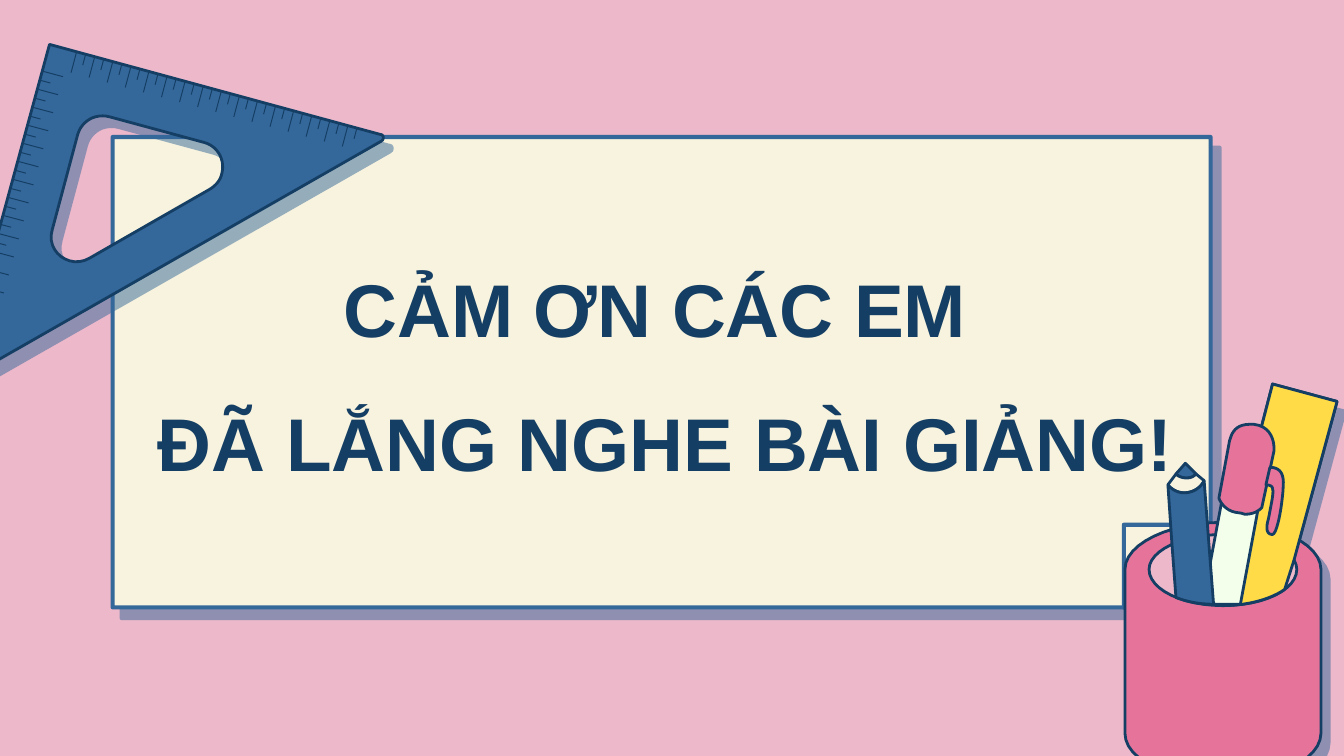
from lxml import etree
from pptx import Presentation
from pptx.dml.color import RGBColor
from pptx.enum import shapes, text
from pptx.oxml import ns
from pptx.util import Cm, Pt

PINK = RGBColor(0xEC, 0xB8, 0xCA)
ROSE = RGBColor(0xE5, 0x73, 0x9A)
CREAM = RGBColor(0xF8, 0xF3, 0xDE)
BLUE = RGBColor(0x34, 0x67, 0x9A)
NAVY = RGBColor(0x14, 0x3E, 0x63)
LEMON = RGBColor(0xF2, 0xF5, 0x74)
YELLOW = RGBColor(0xFF, 0xDB, 0x48)
MINT = RGBColor(0xF3, 0xFF, 0xEB)

RULER = "M 110 0 L 81 112 L 67 164 C 69 165 71 165 73 165 C 92 165 109 160 119 153 L 126 131 L 158 13"
CUP = ("M 73 103 C 33 103 0 119 0 138 L 0 260 C 0 280 33 295 73 295 "
       "C 113 295 146 280 146 260 L 146 138 C 146 119 113 103 73 103")
MOUTH = ("M 73 112 C 43 112 18 124 18 138 C 18 153 43 165 73 165 "
         "C 104 165 128 153 128 138 C 128 124 104 112 73 112")
PEN = "M 77 61 L 58 163 C 62 164 68 164 73 164 L 86 164 L 104 67"
PEN_CAP = ("M 93 30 C 80 30 79 40 78 42 L 70 85 C 70 85 73 95 85 96 C 87 96 88 97 90 97 "
           "C 98 97 102 92 102 92 L 111 50 C 111 50 113 32 96 30")
PEN_CLIP = ("M 108 62 L 105 75 C 105 75 110 75 110 78 C 111 81 109 89 107 100 "
            "C 104 110 107 112 110 112 C 114 111 118 85 118 73 C 118 62 110 62 108 62")
PENCIL_TIP = "M 45 59 L 38 67 C 40 69 43 70 45 70 C 49 70 51 69 53 67"
PENCIL_WOOD = ("M 53 67 C 51 69 49 70 46 70 C 43 70 40 69 38 67 L 32 75 "
               "C 35 79 40 81 44 81 C 50 81 56 78 59 72")
PENCIL_BODY = ("M 59 72 C 56 78 50 81 44 81 C 40 81 35 79 32 75 L 35 119 L 38 159 "
               "C 46 162 55 164 66 164 L 62 112")
SET_SQUARE = ("M 196 97 C 195 101 192 105 187 108 L 98 159 C 83 168 65 154 70 138 L 89 67 "
              "C 92 57 102 51 113 54 L 183 73 C 194 76 199 87 196 97 "
              "M 316 71 C 317 69 316 67 314 67 L 68 0 L 1 246 C 0 248 3 250 5 249 L 315 72")


def style(sp, fill, line, width, shadow=None):
    """Set fill and outline, and a hard shadow at the given distance in points."""
    sp.fill.solid()
    sp.fill.fore_color.rgb = fill
    sp.line.color.rgb = line
    sp.line.width = Pt(width)
    sp.shadow.inherit = False
    if shadow:
        effects = sp._element.spPr.find(ns.qn("a:effectLst"))
        outer = etree.SubElement(effects, ns.qn("a:outerShdw"), blurRad="0",
                                 dist=str(Pt(shadow)), dir="3000000", algn="bl", rotWithShape="0")
        color = etree.SubElement(outer, ns.qn("a:srgbClr"), val=str(BLUE))
        etree.SubElement(color, ns.qn("a:alpha"), val="50000")


def contours(outline, steps=12):
    """Turn M, L and C commands into lists of points, with curves sampled."""
    tokens = iter(outline.split())
    result = []
    for command in tokens:
        count = 3 if command == "C" else 1
        pts = [(float(next(tokens)), float(next(tokens))) for _ in range(count)]
        if command == "M":
            result.append(pts)
        elif command == "L":
            result[-1] += pts
        else:
            curve = [result[-1][-1]] + pts
            for i in range(1, steps + 1):
                t = i / steps
                weights = ((1 - t) ** 3, 3 * t * (1 - t) ** 2, 3 * t * t * (1 - t), t ** 3)
                result[-1].append(tuple(sum(w * p[k] for w, p in zip(weights, curve))
                                        for k in (0, 1)))
    return result


def place(box, units, point):
    """Map a point on a grid that is the given units wide into the box."""
    left, top, width, _ = box
    return round(left + point[0] * width / units), round(top + point[1] * width / units)


def draw(group, box, units, outline, fill, shadow=None):
    """Draw a closed outline in the box."""
    builder = None
    for contour in contours(outline):
        start, *rest = [place(box, units, p) for p in contour]
        if builder is None:
            builder = group.shapes.build_freeform(*start)
        else:
            builder.move_to(*start)
        builder.add_line_segments(rest, close=True)
    style(builder.convert_to_shape(), fill, NAVY, 1.5, shadow)


def add_card(s, box):
    """Add the message card with its folded corner."""
    left, top, width, height = box
    sp = s.shapes.add_shape(shapes.MSO_SHAPE.SNIP_1_RECTANGLE, *box)
    sp.adjustments[0] = 0.18
    sp.rotation = 180
    sp._element.spPr.xfrm.set("flipH", "1")
    style(sp, CREAM, BLUE, 2.25, 7.5)
    fold = s.shapes.add_shape(shapes.MSO_SHAPE.RIGHT_TRIANGLE, left + width - Cm(1.6),
                              top + height - Cm(1.6), Cm(1.57), Cm(1.65))
    fold.rotation = 90
    style(fold, CREAM, BLUE, 2.25)


def add_pencil_cup(s, box):
    """Add the cup with ruler, pen and pencil."""
    group = s.shapes.add_group_shape()
    for outline, fill, shadow in (
            (RULER, LEMON, 6.8), (CUP, ROSE, 6.8), (MOUTH, PINK, None), (RULER, YELLOW, None),
            (PEN, MINT, None), (PEN_CAP, ROSE, None), (PEN_CLIP, ROSE, None),
            (PENCIL_TIP, BLUE, None), (PENCIL_WOOD, CREAM, None), (PENCIL_BODY, BLUE, None)):
        draw(group, box, 158, outline, fill, shadow)


def add_set_square(s, box):
    """Add the set square with long and short marks along two edges."""
    group = s.shapes.add_group_shape()
    draw(group, box, 317, SET_SQUARE, BLUE, 7.5)
    for (x, y), (dx, dy), (mx, my), marks, last_short in (
            ((63, 20), (-1.83, 6.71), (15, 4), 25, 19),
            ((88, 6), (6.73, 1.83), (-4, 15), 32, 31)):
        for i in range(marks):
            if i % 2 and i > last_short:
                continue
            size = 0.5 if i % 2 else 1
            start = x + i * dx, y + i * dy
            end = start[0] + size * mx, start[1] + size * my
            mark = group.shapes.add_connector(shapes.MSO_CONNECTOR.STRAIGHT,
                                              *place(box, 317, start), *place(box, 317, end))
            mark.line.color.rgb = NAVY
            mark.line.width = Pt(0.52)
            etree.SubElement(mark._element.spPr, ns.qn("a:effectLst"))


def add_message(s, box):
    """Add the closing message."""
    tf = s.shapes.add_textbox(*box).text_frame
    tf.word_wrap = True
    tf.auto_size = text.MSO_AUTO_SIZE.SHAPE_TO_FIT_TEXT
    tf.text = "CẢM ƠN CÁC EM \nĐÃ LẮNG NGHE BÀI GIẢNG!"
    for p in tf.paragraphs:
        p.alignment = text.PP_ALIGN.CENTER
        p.line_spacing = 1.5
        p.font.name = "Arial"
        p.font.size = Pt(40)
        p.font.bold = True
        p.font.color.rgb = NAVY


def main():
    """Build and save the slide."""
    prs = Presentation()
    prs.slide_width, prs.slide_height = Cm(25.4), Cm(14.29)
    s = prs.slides.add_slide(prs.slide_layouts[6])
    s.background.fill.solid()
    s.background.fill.fore_color.rgb = PINK
    add_card(s, (Cm(2.13), Cm(2.59), Cm(20.75), Cm(8.89)))
    add_pencil_cup(s, (Cm(21.26), Cm(7.26), Cm(4.01), Cm(7.49)))
    add_set_square(s, (Cm(-0.79), Cm(0.84), Cm(8.05), Cm(6.32)))
    add_message(s, (Cm(2.62), Cm(3.99), Cm(19.91), Cm(5.38)))
    prs.save("out.pptx")


if __name__ == "__main__":
    main()
